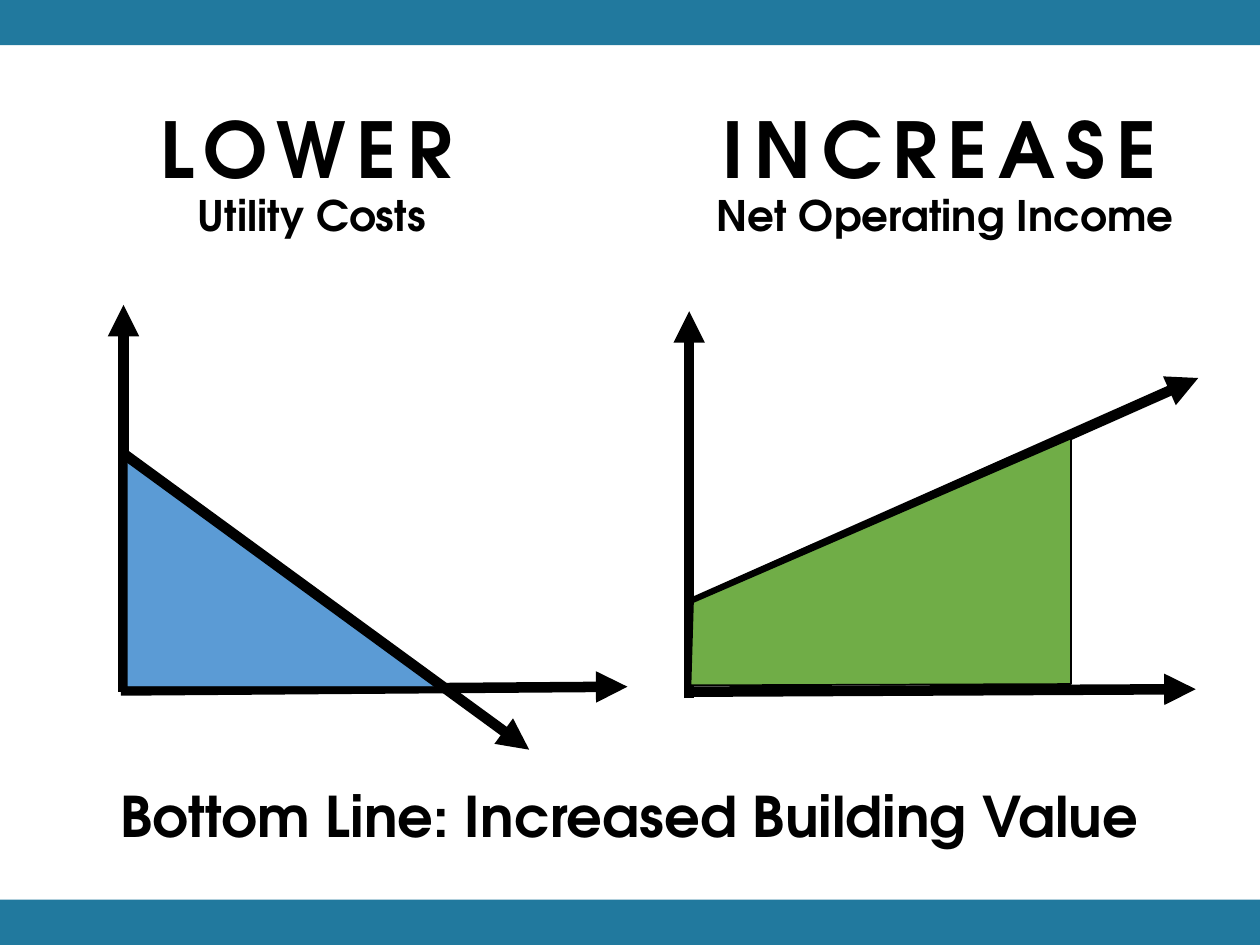
from lxml.etree import SubElement
from pptx import Presentation
from pptx.dml.color import RGBColor
from pptx.enum.shapes import MSO_CONNECTOR, MSO_SHAPE
from pptx.enum.text import MSO_ANCHOR, PP_ALIGN
from pptx.oxml.ns import qn
from pptx.util import Inches, Pt

# Theme
THEME = {
    "font": "TeX Gyre Adventor", "ink": "000000", "band": "21799E",
    "cost": "5B9BD5", "income": "70AD47",
    "word": 44, "label": 24, "bottom": 32, "axis": 6, "tracking": 6,
}

# Content: box, then (text, size, letter spacing) per line
TEXTS = [
    ((0.35, 0.76, 4.25, 1.2), [("LOWER", "word", "tracking"),
                              ("Utility Costs", "label", None)]),
    ((4.99, 0.76, 5.02, 1.2), [("INCREASE", "word", "tracking"),
                              ("Net Operating Income", "label", None)]),
    ((0, 6.02, 10, 0.77), [("Bottom Line: Increased Building Value", "bottom", None)]),
]
BANDS = [(0, 0, 10, 0.36), (0, 7.14, 10, 0.36)]
COST_AXES = [(0.96, 5.48, 4.98, 5.45), (0.98, 5.49, 0.98, 2.42)]
COST_AREA = (1.01, 3.6, 2.53, 1.85)
COST_TREND = (0.98, 3.6, 4.2, 5.95)
INCOME_ARROWS = [(5.47, 5.49, 9.49, 5.47), (5.5, 4.78, 9.51, 3),
                 (5.47, 5.54, 5.47, 2.47)]
INCOME_AREA = [(5.48, 5.44), (5.5, 4.78), (8.5, 3.48), (8.5, 5.43)]


def color(name):
    return RGBColor.from_string(THEME[name])


def paint(sp, fill, width=None):
    sp.shadow.inherit = False
    sp.fill.solid()
    sp.fill.fore_color.rgb = color(fill)
    if width is None:
        sp.line.fill.background()
    else:
        sp.line.color.rgb = color("ink")
        sp.line.width = Pt(width)


def add_arrow(s, ends):
    c = s.shapes.add_connector(MSO_CONNECTOR.STRAIGHT, *map(Inches, ends))
    c.line.color.rgb = color("ink")
    c.line.width = Pt(THEME["axis"])
    SubElement(c.line._get_or_add_ln(), qn("a:tailEnd"), type="triangle")
    SubElement(c._element.spPr, qn("a:effectLst"))


def add_text(s, box, lines):
    tf = s.shapes.add_textbox(*map(Inches, box)).text_frame
    tf.word_wrap = True
    tf.vertical_anchor = MSO_ANCHOR.BOTTOM
    p = tf.paragraphs[0]
    p.alignment, p.line_spacing = PP_ALIGN.CENTER, 0.9
    for i, (text, size, tracking) in enumerate(lines):
        if i:
            p.add_line_break()
        r = p.add_run()
        r.text = text
        fmt = {"name": THEME["font"], "size": Pt(THEME[size]), "bold": True}
        for key, value in fmt.items():
            setattr(r.font, key, value)
        r.font.color.rgb = color("ink")
        if tracking:
            r._r.get_or_add_rPr().set("spc", str(THEME[tracking] * 100))


def main():
    prs = Presentation()
    prs.slide_width, prs.slide_height = Inches(10), Inches(7.5)
    s = prs.slides.add_slide(prs.slide_layouts[6])

    # Top and bottom bands
    for box in BANDS:
        paint(s.shapes.add_shape(MSO_SHAPE.RECTANGLE, *map(Inches, box)), "band")

    # Falling utility costs
    for ends in COST_AXES:
        add_arrow(s, ends)
    sp = s.shapes.add_shape(MSO_SHAPE.ISOSCELES_TRIANGLE, *map(Inches, COST_AREA))
    sp.adjustments[0] = 0
    paint(sp, "cost", 0.5)
    add_arrow(s, COST_TREND)

    # Rising net operating income
    for ends in INCOME_ARROWS:
        add_arrow(s, ends)
    start, *rest = [(Inches(x), Inches(y)) for x, y in INCOME_AREA]
    fb = s.shapes.build_freeform(*start)
    fb.add_line_segments(rest, close=True)
    paint(fb.convert_to_shape(), "income", 1)

    # Headings and conclusion
    for box, lines in TEXTS:
        add_text(s, box, lines)

    prs.save("out.pptx")


if __name__ == "__main__":
    main()
